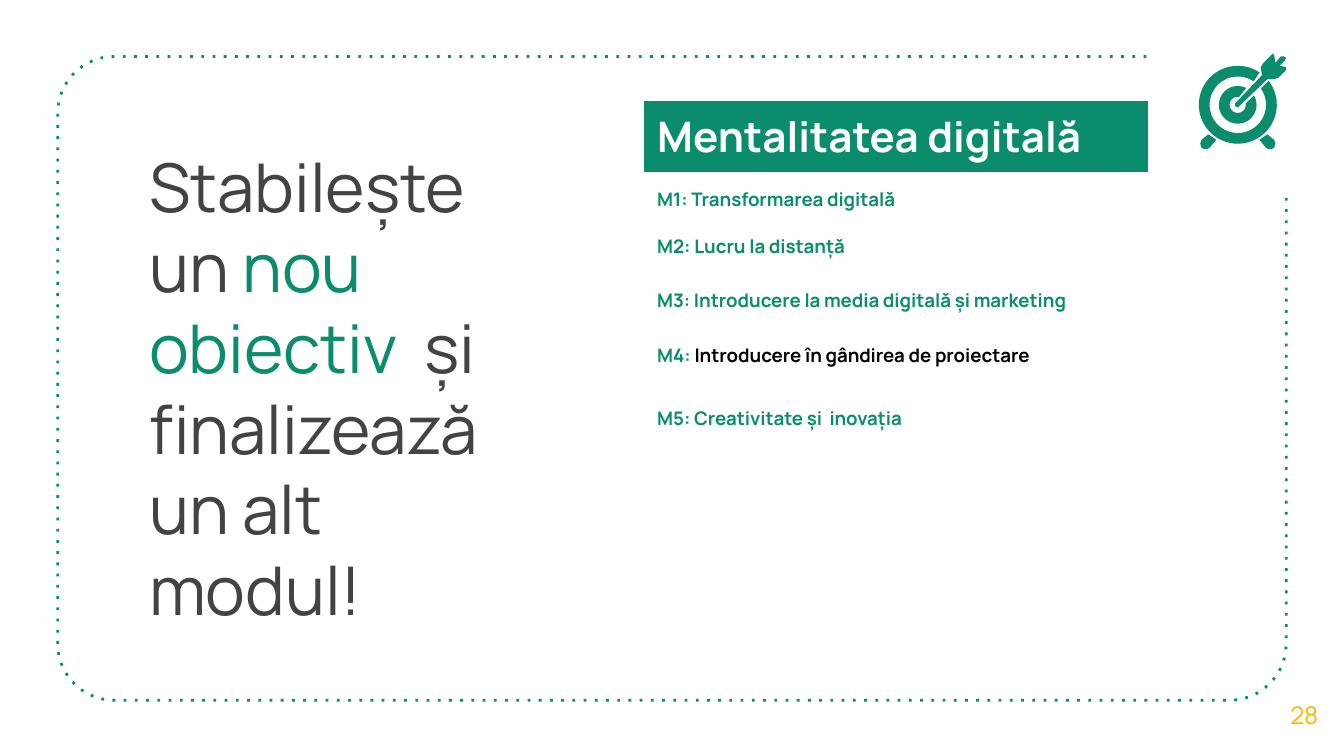
from math import cos, radians, sin

from lxml import etree
from pptx import Presentation
from pptx.dml.color import RGBColor
from pptx.enum.dml import MSO_LINE
from pptx.enum.text import MSO_ANCHOR, MSO_AUTO_SIZE, PP_ALIGN
from pptx.util import Inches, Pt

TOP, MIDDLE = MSO_ANCHOR.TOP, MSO_ANCHOR.MIDDLE
LEFT, CENTER = PP_ALIGN.LEFT, PP_ALIGN.CENTER
ROUND_DOT = MSO_LINE.ROUND_DOT
NO_AUTOFIT = MSO_AUTO_SIZE.NONE

GREEN = RGBColor(0x0A, 0x8C, 0x6D)
GREY = RGBColor(0x43, 0x43, 0x43)
BLACK = RGBColor(0, 0, 0)
WHITE = RGBColor(255, 255, 255)
YELLOW = RGBColor(0xFF, 0xB6, 0x00)
FONT = "Manrope"

# Content: each text is a list of (words, colour) runs
TITLE = [("Stabilește un ", GREY), ("nou obiectiv  ", GREEN),
         ("și finalizează un alt modul!", GREY)]
PAGE_NUMBER = [("28", YELLOW)]
HEADING = [("Mentalitatea digitală", WHITE)]
MODULES = [
    [("M1: Transformarea digitală", GREEN)],
    [("M2: Lucru la distanță", GREEN)],
    [("M3: Introducere la media digitală și marketing", GREEN)],
    [("M4: ", GREEN), ("Introducere în gândirea de proiectare", BLACK)],
    [("M5: Creativitate și  inovația", GREEN)],
]
ROW_HEIGHTS = [0.53, 0.41, 0.4, 0.41, 0.47, 0.41]

# Slide, frame and target geometry, in inches
SLIDE_WIDTH = 10
SLIDE_HEIGHT = SLIDE_WIDTH * 9 / 16
FRAME_LEFT, FRAME_TOP, FRAME_RIGHT, FRAME_BOTTOM = 0.43, 0.42, 9.57, 5.21
CORNER = 0.42
FRAME_START, FRAME_END = (8.53, FRAME_TOP), (FRAME_RIGHT, 1.46)
TARGET_X, TARGET_Y = 9.21, 0.78
# (outer radius, its arc, inner radius, its arc), degrees clockwise from east
RINGS = [(0.29, (-38, 304), 0.21, (-35, 304)),
         (0.14, (-30, 297), 0.06, (-10, 280))]
# Offsets from the target centre
FOOT = [(-0.22, 0.22), (-0.27, 0.26), (-0.28, 0.29), (-0.27, 0.32),
        (-0.25, 0.33), (-0.23, 0.33), (-0.21, 0.32), (-0.16, 0.26)]
ARROW = [(0.26, -0.38), (0.19, -0.31), (0.17, -0.28), (0.18, -0.22),
         (-0.02, -0.01), (-0.02, 0.01), (0, 0.02), (0.22, -0.19),
         (0.27, -0.19), (0.3, -0.2), (0.36, -0.26), (0.36, -0.28),
         (0.31, -0.29), (0.35, -0.33), (0.36, -0.35), (0.34, -0.36),
         (0.32, -0.36), (0.28, -0.31), (0.27, -0.37)]


def write_text(frame, runs, size, bold=False, align=LEFT, anchor=TOP):
    frame.word_wrap = True
    frame.vertical_anchor = anchor
    paragraph = frame.paragraphs[0]
    paragraph.alignment = align
    paragraph.line_spacing = 1.0
    for words, colour in runs:
        run = paragraph.add_run()
        run.text = words
        font = run.font
        font.name, font.size, font.bold = FONT, Pt(size), bold
        font.color.rgb = colour


def set_margins(frame, margin):
    frame.margin_left = frame.margin_right = Inches(margin)
    frame.margin_top = frame.margin_bottom = Inches(margin)


def arc(center_x, center_y, radius, start, end, steps):
    angles = [radians(start + (end - start) * i / steps) for i in range(steps + 1)]
    return [(center_x + radius * cos(a), center_y + radius * sin(a)) for a in angles]


def draw_outline(shapes, points, closed=True):
    points = [(Inches(x), Inches(y)) for x, y in points]
    builder = shapes.build_freeform(*points[0])
    builder.add_line_segments(points[1:], close=closed)
    shape = builder.convert_to_shape()
    shape.shadow.inherit = False
    if closed:
        shape.fill.solid()
        shape.fill.fore_color.rgb = GREEN
        shape.line.fill.background()
    else:
        shape.fill.background()
        shape.line.color.rgb = GREEN
        shape.line.width = Pt(1.5)
        shape.line.dash_style = ROUND_DOT
        # The widely spaced dot has no enum member
        for dash in shape.element.iter("{*}prstDash"):
            dash.set("val", "dot")


def draw_frame(slide):
    near_x, far_x = FRAME_LEFT + CORNER, FRAME_RIGHT - CORNER
    near_y, far_y = FRAME_TOP + CORNER, FRAME_BOTTOM - CORNER
    points = [FRAME_START]
    for x, y, start in [(near_x, near_y, 270), (near_x, far_y, 180), (far_x, far_y, 90)]:
        points += arc(x, y, CORNER, start, start - 90, 16)
    draw_outline(slide.shapes, points + [FRAME_END], closed=False)


def draw_target(slide):
    shapes = slide.shapes.add_group_shape().shapes
    for outer, outer_arc, inner, inner_arc in RINGS:
        draw_outline(shapes, arc(TARGET_X, TARGET_Y, outer, *outer_arc, 60)
                     + arc(TARGET_X, TARGET_Y, inner, *inner_arc[::-1], 60))
    mirrored_foot = [(-x, y) for x, y in FOOT]
    for offsets in (FOOT, mirrored_foot, ARROW):
        draw_outline(shapes, [(TARGET_X + x, TARGET_Y + y) for x, y in offsets])


def add_module_table(slide):
    table = slide.shapes.add_table(len(ROW_HEIGHTS), 1, Inches(4.79), Inches(0.75),
                                   Inches(3.75), Inches(sum(ROW_HEIGHTS))).table
    table.first_row = table.horz_banding = False
    for index, (runs, height) in enumerate(zip([HEADING] + MODULES, ROW_HEIGHTS)):
        table.rows[index].height = Inches(height)
        cell = table.cell(index, 0)
        heading = index == 0
        if heading:
            cell.fill.solid()
            cell.fill.fore_color.rgb = GREEN
        else:
            cell.fill.background()
        write_text(cell.text_frame, runs, 22.5 if heading else 10, bold=True)
        cell.vertical_anchor = MIDDLE if index == 1 else TOP
        # Cells have no visible borders
        properties = cell._tc.get_or_add_tcPr()
        namespace = properties.nsmap["a"]
        for position, side in enumerate(("lnL", "lnR", "lnT", "lnB")):
            border = etree.Element(f"{{{namespace}}}{side}")
            etree.SubElement(border, f"{{{namespace}}}noFill")
            properties.insert(position, border)


def main():
    presentation = Presentation()
    presentation.slide_width = Inches(SLIDE_WIDTH)
    presentation.slide_height = Inches(SLIDE_HEIGHT)
    slide = presentation.slides.add_slide(presentation.slide_layouts[5])

    draw_frame(slide)

    # Title
    title = slide.shapes.title
    title.left, title.top = Inches(1.01), Inches(0.98)
    title.width, title.height = Inches(2.97), Inches(0.94)
    set_margins(title.text_frame, 0.1)
    title.text_frame.auto_size = NO_AUTOFIT
    write_text(title.text_frame, TITLE, 36)

    # Page number
    number = slide.shapes.add_textbox(Inches(9.41), Inches(5.02), Inches(0.59), Inches(0.6))
    set_margins(number.text_frame, 0.1)
    write_text(number.text_frame, PAGE_NUMBER, 13, align=CENTER, anchor=MIDDLE)

    draw_target(slide)
    add_module_table(slide)
    presentation.save("out.pptx")


if __name__ == "__main__":
    main()
